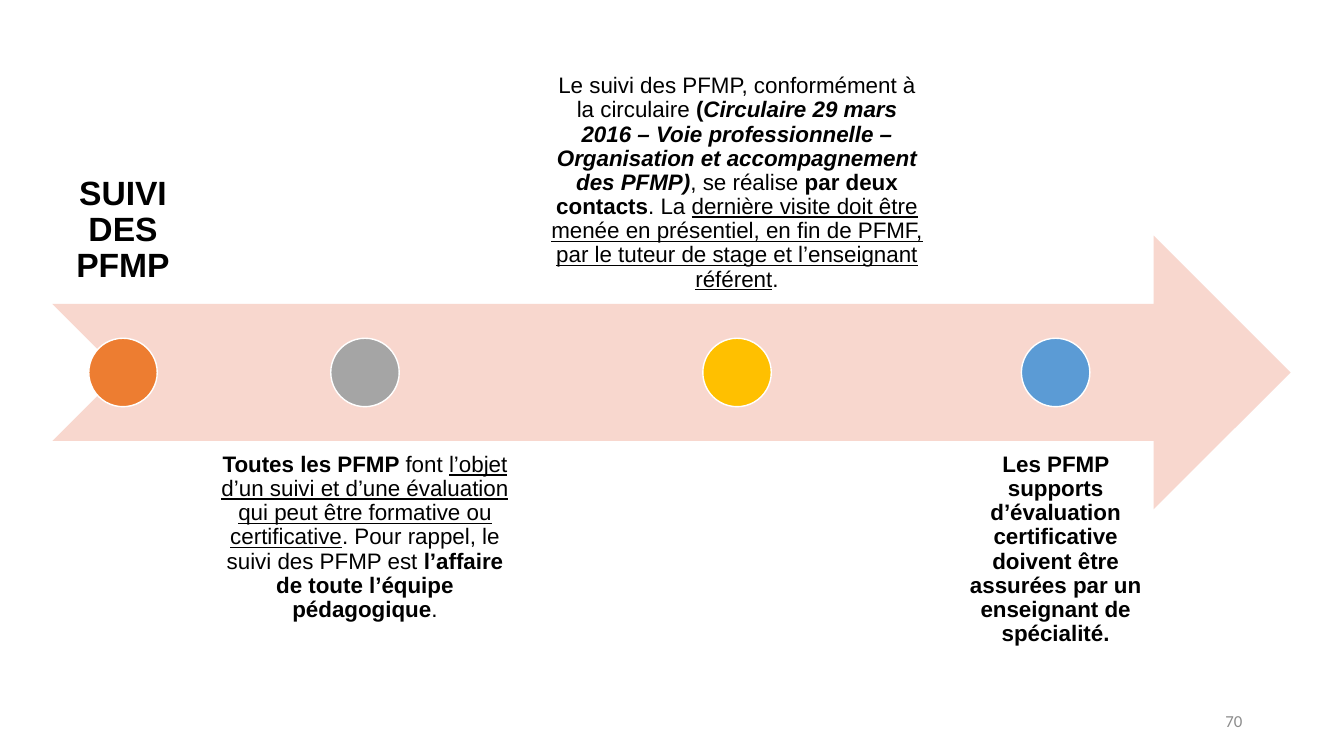
from pptx import Presentation
from pptx.dml.color import RGBColor
from pptx.enum.shapes import MSO_SHAPE as Shape
from pptx.enum.text import MSO_ANCHOR as Anchor, PP_ALIGN as Align
from pptx.util import Inches, Pt

SLIDE_W, SLIDE_H = 13.33, 7.5
TIMELINE_BOX = (0.52, 0.3, 12.28, 6.79)
NUMBER_BOX = (9.42, 6.95, 3, 0.4)
BAND_SHARE = 0.4
STEP_GAP = 0.07

STEPS = [
    (1.38, "ED7D31", 24, 0.19, [("SUIVI DES PFMP", "b")]),
    (3.28, "A5A5A5", 16, 0.12, [
        ("Toutes les PFMP ", "b"),
        ("font ", ""),
        ("l’objet d’un suivi et d’une évaluation qui peut être formative ou certificative", "u"),
        (". Pour rappel, le suivi des PFMP est ", ""),
        ("l’affaire de toute l’équipe pédagogique", "b"),
        (".", ""),
    ]),
    (3.96, "FFC000", 16, 0.12, [
        ("Le suivi des PFMP, conformément à la circulaire ", ""),
        ("(", "b"),
        ("Circulaire 29 mars 2016 – Voie professionnelle – Organisation et "
         "accompagnement des PFMP)", "bi"),
        (", se réalise ", ""),
        ("par deux contacts", "b"),
        (". La ", ""),
        ("dernière visite doit être menée en présentiel, en fin de PFMF, par le tuteur "
         "de stage et l’enseignant référent", "u"),
        (".", ""),
    ]),
    (2.22, "5B9BD5", 16, 0.12, [
        ("Les PFMP supports d’évaluation certificative doivent être assurées par un "
         "enseignant de spécialité.", "b"),
    ]),
]


def color(hex_code):
    return RGBColor.from_string(hex_code)


def add_filled(slide, preset, box, fill, outline=None):
    shape = slide.shapes.add_shape(preset, *map(Inches, box))
    shape.shadow.inherit = False
    shape.fill.solid()
    shape.fill.fore_color.rgb = color(fill)
    if outline:
        shape.line.color.rgb = color(outline)
        shape.line.width = Pt(1)
    else:
        shape.line.fill.background()


def add_text(slide, box, runs, size, font, ink, align, anchor, insets):
    frame = slide.shapes.add_textbox(*map(Inches, box)).text_frame
    frame.word_wrap = True
    frame.vertical_anchor = anchor
    frame.margin_left = frame.margin_right = Inches(insets[0])
    frame.margin_top = frame.margin_bottom = Inches(insets[1])
    paragraph = frame.paragraphs[0]
    paragraph.alignment = align
    paragraph.font.size = Pt(size)
    paragraph.font.name = font
    paragraph.font.color.rgb = color(ink)
    for words, marks in runs:
        run = paragraph.add_run()
        run.text = words
        run.font.bold = "b" in marks
        run.font.italic = "i" in marks
        run.font.underline = "u" in marks
    return paragraph


def draw_timeline(slide, box):
    left, top, width, height = box
    band = height * BAND_SHARE
    middle = top + height / 2
    dot = band / 4
    add_filled(slide, Shape.NOTCHED_RIGHT_ARROW,
               (left, middle - band / 2, width, band), "F8D7CE")
    step_left = left + 0.01
    for index, (step_width, dot_fill, size, inset, runs) in enumerate(STEPS):
        above = index % 2 == 0
        step_top = top if above else top + height - band
        caption = add_text(slide, (step_left, step_top, step_width, band), runs, size,
                           "Arial", "000000", Align.CENTER,
                           Anchor.BOTTOM if above else Anchor.TOP, (inset, inset))
        caption.line_spacing = 0.9
        caption.space_after = Pt(0.35 * size)
        dot_left = step_left + (step_width - dot) / 2
        add_filled(slide, Shape.OVAL, (dot_left, middle - dot / 2, dot, dot),
                   dot_fill, "FFFFFF")
        step_left += step_width + STEP_GAP


def draw_page_number(slide, box):
    add_text(slide, box, [("70", "")], 12, "Calibri", "8C8C8C",
             Align.RIGHT, Anchor.MIDDLE, (0.1, 0.05))


def main():
    deck = Presentation()
    deck.slide_width, deck.slide_height = Inches(SLIDE_W), Inches(SLIDE_H)
    slide = deck.slides.add_slide(deck.slide_layouts[6])
    draw_timeline(slide, TIMELINE_BOX)
    draw_page_number(slide, NUMBER_BOX)
    deck.save("out.pptx")


if __name__ == "__main__":
    main()
